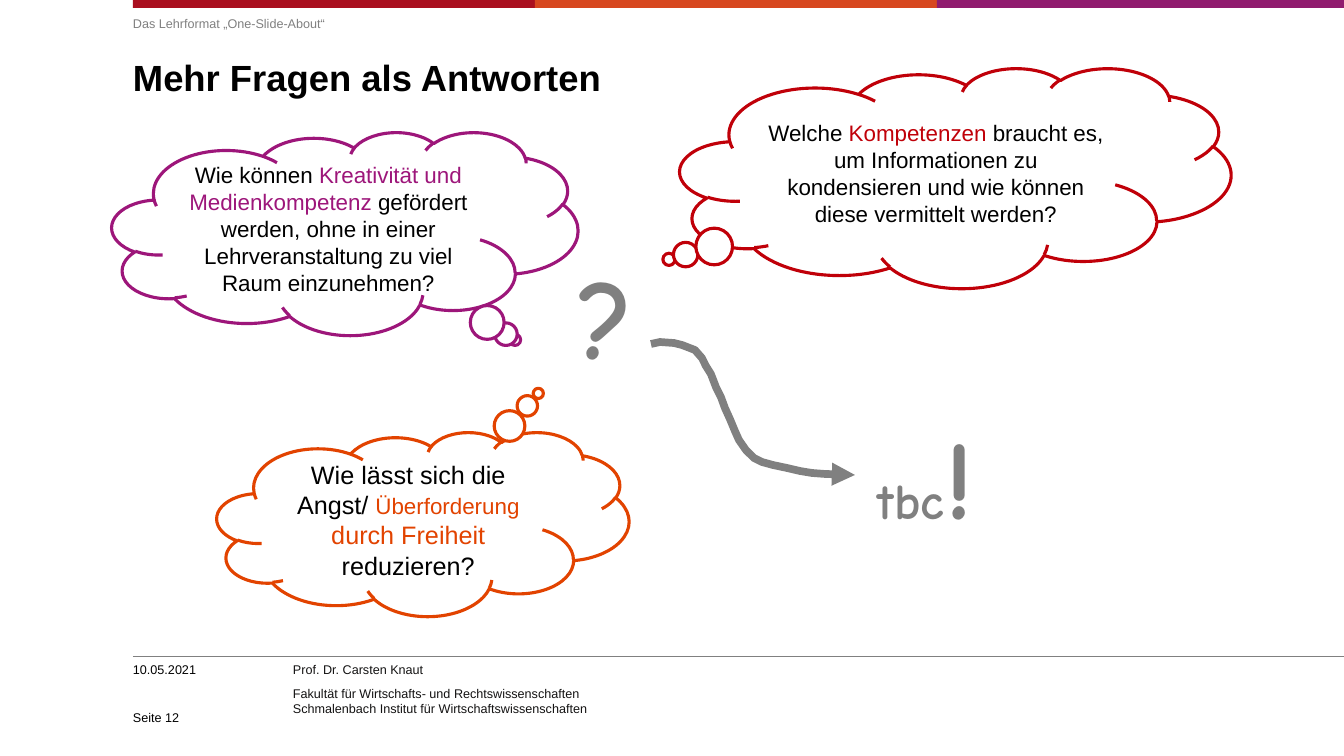
import dataclasses

import lxml.etree
import pptx
import pptx.dml.color
import pptx.enum.shapes
import pptx.enum.text
import pptx.oxml.ns
import pptx.util

SHAPES = pptx.enum.shapes.MSO_SHAPE
ALIGN = pptx.enum.text.PP_ALIGN
ANCHOR = pptx.enum.text.MSO_ANCHOR


@dataclasses.dataclass(frozen=True)
class Theme:
    black: str = "000000"
    ink: str = "141313"
    gray: str = "808080"
    white: str = "FFFFFF"
    bars: tuple = ("AA0F1F", "D7471F", "901B6E")
    red: str = "C00009"
    purple: str = "9D167A"
    orange: str = "E24300"
    font: str = "Arial"
    hand: str = "Comic Neue"
    small: int = 9
    body: int = 16
    large: int = 18
    title: int = 26
    tbc: int = 36
    mark: int = 80
    rule: float = 0.5
    outline: float = 2.25
    arrow: float = 5.5


class SlideBuilder:
    """Draws styled elements on the current slide, with lengths in px."""

    def __init__(self, deck, theme):
        self.theme = theme
        self.page = deck.slides.add_slide(deck.slide_layouts[6])

    @staticmethod
    def px(value):
        return pptx.util.Emu(round(value * 914400 / 100.8))

    @staticmethod
    def color(value):
        return pptx.dml.color.RGBColor.from_string(value)

    def frame(self, place):
        return [self.px(value) for value in place]

    def stroke(self, line, color, width):
        line.color.rgb = self.color(color)
        line.width = pptx.util.Pt(width)

    def span(self, para, text, size, color, font=None, bold=False):
        run = para.add_run()
        run.text = text
        run.font.name = font or self.theme.font
        run.font.size = pptx.util.Pt(size)
        run.font.bold = bold
        run.font.color.rgb = self.color(color)

    def text(self, place, size, color, *lines, bold=False, wrap=True, after=0, leading=None, anchor=ANCHOR.TOP):
        frame = self.page.shapes.add_textbox(*self.frame(place)).text_frame
        frame.word_wrap = wrap
        frame.vertical_anchor = anchor
        frame.margin_left = frame.margin_right = frame.margin_top = frame.margin_bottom = 0
        for index, line in enumerate(lines):
            para = frame.add_paragraph() if index else frame.paragraphs[0]
            para.space_after = pptx.util.Pt(after)
            if leading:
                para.line_spacing = pptx.util.Pt(leading)
            for number, part in enumerate(line.split("\n")):
                if number:
                    para.add_line_break()
                self.span(para, part, size, color, bold=bold)

    def handwriting(self, place, *spans):
        frame = self.page.shapes.add_textbox(*self.frame(place)).text_frame
        frame.word_wrap = False
        frame.auto_size = pptx.enum.text.MSO_AUTO_SIZE.SHAPE_TO_FIT_TEXT
        for text, size in spans:
            self.span(frame.paragraphs[0], text, size, self.theme.gray, self.theme.hand, True)

    def bar(self, place, color):
        shape = self.page.shapes.add_shape(SHAPES.RECTANGLE, *self.frame(place))
        shape.shadow.inherit = False
        shape.fill.solid()
        shape.fill.fore_color.rgb = self.color(color)
        shape.line.fill.background()

    def rule(self, left, right, top):
        line = self.page.shapes.add_connector(
            pptx.enum.shapes.MSO_CONNECTOR.STRAIGHT, *self.frame((left, top, right, top)))
        self.stroke(line.line, self.theme.gray, self.theme.rule)
        lxml.etree.SubElement(line._element.spPr, pptx.oxml.ns.qn("a:effectLst"))

    def thought(self, place, tail, color, *spans):
        cloud = self.page.shapes.add_shape(SHAPES.CLOUD_CALLOUT, *self.frame(place))
        cloud.adjustments[0], cloud.adjustments[1] = tail
        cloud.shadow.inherit = False
        cloud.fill.solid()
        cloud.fill.fore_color.rgb = self.color(self.theme.white)
        self.stroke(cloud.line, color, self.theme.outline)
        cloud.text_frame.word_wrap = True
        cloud.text_frame.vertical_anchor = ANCHOR.MIDDLE
        para = cloud.text_frame.paragraphs[0]
        para.alignment = ALIGN.CENTER
        for text, size, ink in spans:
            self.span(para, text, size, ink)

    def arrow(self, points):
        start, *rest = [self.frame(point) for point in points]
        builder = self.page.shapes.build_freeform(*start)
        builder.add_line_segments(rest, close=False)
        curve = builder.convert_to_shape()
        curve.shadow.inherit = False
        curve.fill.background()
        self.stroke(curve.line, self.theme.gray, self.theme.arrow)
        outline = curve.line._get_or_add_ln()
        lxml.etree.SubElement(outline, pptx.oxml.ns.qn("a:round"))
        lxml.etree.SubElement(outline, pptx.oxml.ns.qn("a:tailEnd"), type="triangle")


def main():
    deck = pptx.Presentation()
    deck.slide_width, deck.slide_height = SlideBuilder.px(1344), SlideBuilder.px(756)
    theme = Theme()
    page = SlideBuilder(deck, theme)
    margin, bar_width = 133, 402

    for index, color in enumerate(theme.bars):
        left = margin + index * bar_width
        page.bar((left, 0, min(bar_width + index // 2 * 5, 1344 - left), 8), color)
    page.rule(margin, 1344, 656)
    page.text((293, 662, 434, 60), theme.small, theme.ink, "Prof. Dr. Carsten Knaut",
              "Fakultät für Wirtschafts- und Rechtswissenschaften\n"
              "Schmalenbach Institut für Wirtschaftswissenschaften", wrap=False, after=6)
    page.text((margin, 57, 1190, 99), theme.title, theme.black, "Mehr Fragen als Antworten",
              bold=True, leading=30)
    page.text((margin, 16, 1189, 24), theme.small, theme.gray, "Das Lehrformat „One-Slide-About“")
    page.text((margin, 662, 143, 20), theme.small, theme.black, "10.05.2021", wrap=False)
    page.text((margin, 702, 143, 23), theme.small, theme.black, "Seite 12", anchor=ANCHOR.BOTTOM)

    page.thought((680, 68, 551, 220), (-0.52, 0.37), theme.red,
                 ("Welche ", theme.body, theme.black),
                 ("Kompetenzen", theme.body, theme.red),
                 (" braucht es, um Informationen zu kondensieren und wie können diese vermittelt werden?",
                  theme.body, theme.black))
    page.thought((112, 132, 466, 203), (0.365, 0.524), theme.purple,
                 ("Wie können ", theme.body, theme.black),
                 ("Kreativität und Medienkompetenz", theme.body, theme.purple),
                 (" gefördert werden, ohne in einer Lehrveranstaltung zu viel Raum einzunehmen?",
                  theme.body, theme.black))
    page.thought((217, 432, 412, 184), (0.28, -0.71), theme.orange,
                 ("Wie lässt sich die Angst/ ", theme.large, theme.black),
                 ("Überforderung", theme.body, theme.orange),
                 (" durch Freiheit", theme.large, theme.orange),
                 (" reduzieren?", theme.large, theme.black))

    page.handwriting((568, 243, 85, 146), ("?", theme.mark))
    page.handwriting((868, 403, 128, 146), ("tbc", theme.tbc), ("!", theme.mark))
    page.arrow([(651, 344), (660, 342), (674, 343), (682, 345), (695, 350), (702, 358),
                (706, 366), (711, 374), (716, 387), (721, 397), (725, 408), (730, 419),
                (735, 431), (739, 440), (746, 450), (754, 458), (762, 462), (773, 465),
                (787, 468), (800, 471), (812, 473), (825, 474), (855, 475)])
    deck.save("out.pptx")


if __name__ == "__main__":
    main()
